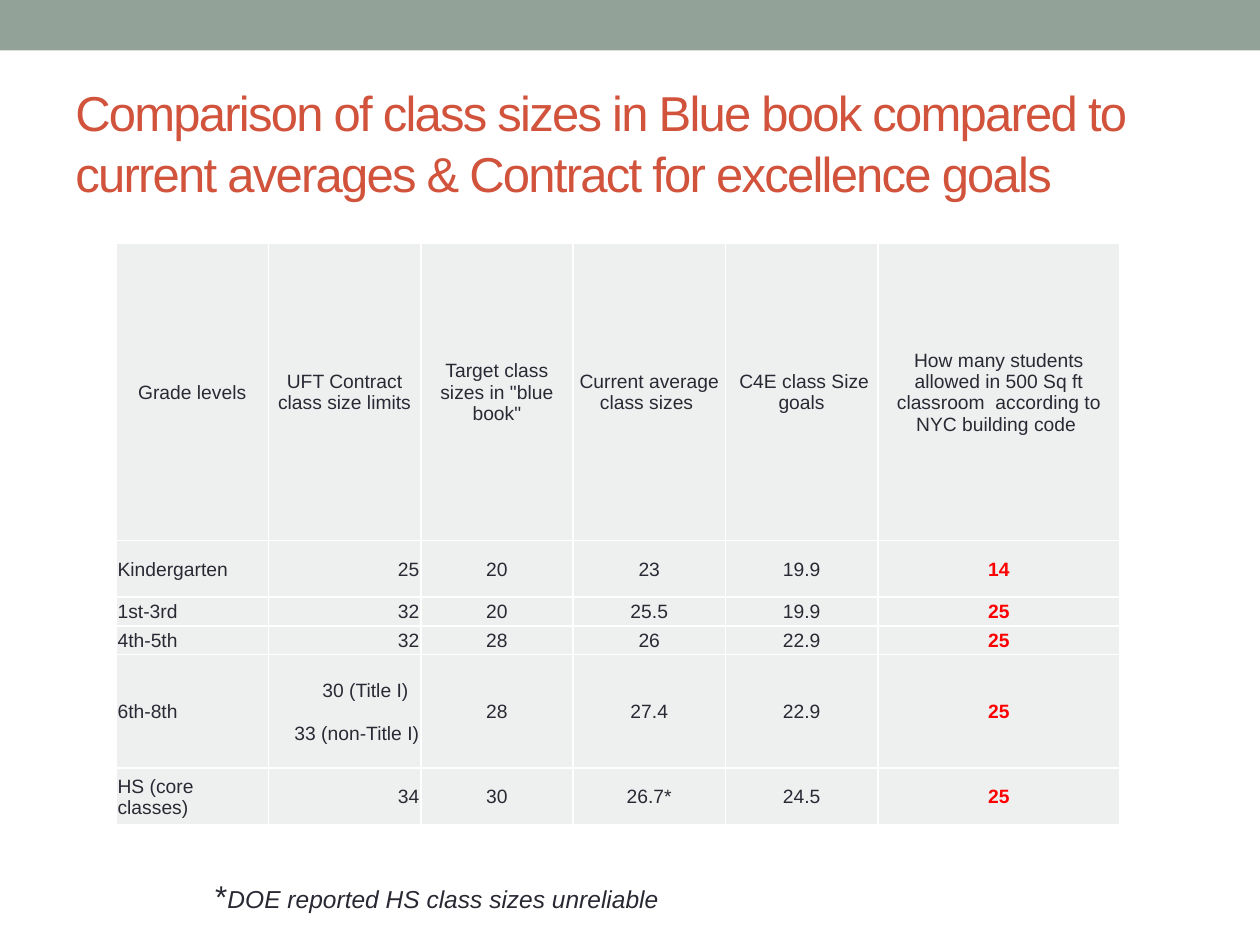
import pptx
import pptx.util
import pptx.dml.color
import pptx.enum.shapes
import pptx.enum.text
import pptx.oxml
import pptx.oxml.ns

Cm = pptx.util.Cm
Pt = pptx.util.Pt
ALIGN = pptx.enum.text.PP_ALIGN
ANCHOR = pptx.enum.text.MSO_ANCHOR

COLOURS = {
    "banner": "93A299",
    "title": "D2533C",
    "text": "292934",
    "cell": "EEF0EF",
    "border": "FFFFFF",
    "code_limit": "FF0000",
}
FONT = "Arial"
HEADINGS = [
    "Grade levels",
    "UFT Contract class size limits",
    'Target class sizes in "blue book"',
    "Current average class sizes ",
    " C4E class Size goals",
    "How many students allowed in 500 Sq ft classroom  according to NYC building code ",
]
GRADES = [
    ["Kindergarten", "25", "20", "23", "19.9", "14"],
    ["1st-3rd", "32", "20", "25.5", "19.9", "25"],
    ["4th-5th", "32", "28", "26", "22.9", "25"],
    ["6th-8th", "30 (Title I)  \n33 (non-Title I)", "28", "27.4", "22.9", "25"],
    ["HS (core classes)", "34", "30", "26.7*", "24.5", "25"],
]
COLUMN_WIDTHS = [3.07] * 5 + [4.88]
ROW_HEIGHTS = [5.99, 1.14, 0.58, 0.58, 2.29, 1.14]
GRADE_ALIGNS = [ALIGN.LEFT, ALIGN.RIGHT] + [ALIGN.CENTER] * 4


def colour(name):
    return pptx.dml.color.RGBColor.from_string(COLOURS[name])


def add_span(para, text, size, colour_name="text", bold=False, italic=False):
    span = para.add_run()
    span.text = text
    span.font.name = FONT
    span.font.size = Pt(size)
    span.font.bold = bold
    span.font.italic = italic
    span.font.color.rgb = colour(colour_name)
    return span


def add_banner(page, left, top, width, height):
    banner = page.shapes.add_shape(
        pptx.enum.shapes.MSO_SHAPE.RECTANGLE, Cm(left), Cm(top), Cm(width), Cm(height))
    banner.shadow.inherit = False
    banner.fill.solid()
    banner.fill.fore_color.rgb = colour("banner")
    banner.line.fill.background()


def add_title(page, left, top, width, height):
    box = page.shapes.add_textbox(Cm(left), Cm(top), Cm(width), Cm(height))
    frame = box.text_frame
    frame.word_wrap = True
    frame.vertical_anchor = ANCHOR.MIDDLE
    para = frame.paragraphs[0]
    para.line_spacing = 1.05
    span = add_span(
        para,
        "Comparison of class sizes in Blue book compared to "
        "current averages & Contract for excellence goals",
        28, "title")
    span.font._element.set("spc", "-100")


def add_borders(cell):
    properties = cell._tc.get_or_add_tcPr()
    for index, side in enumerate(["lnL", "lnR", "lnT", "lnB"]):
        properties.insert(index, pptx.oxml.parse_xml(
            f'<a:{side} {pptx.oxml.ns.nsdecls("a")} w="{Pt(1)}"><a:solidFill>'
            f'<a:srgbClr val="{COLOURS["border"]}"/></a:solidFill></a:{side}>'))


def fill_cell(cell, text, align, colour_name, bold):
    cell.fill.solid()
    cell.fill.fore_color.rgb = colour("cell")
    add_borders(cell)
    cell.vertical_anchor = ANCHOR.MIDDLE
    cell.margin_left = cell.margin_right = cell.margin_top = Cm(0.03)
    cell.margin_bottom = 0
    frame = cell.text_frame
    for index, line in enumerate(text.split("\n")):
        para = frame.add_paragraph() if index else frame.paragraphs[0]
        para.alignment = align
        if index:
            para.space_before = Pt(12.5)
        add_span(para, line, 11, colour_name, bold)


def add_class_sizes(page, left, top, width, height):
    rows = [HEADINGS] + GRADES
    table = page.shapes.add_table(
        len(rows), len(HEADINGS), Cm(left), Cm(top), Cm(width), Cm(height)).table
    table.first_row = False
    table.horz_banding = False
    for column, share in zip(table.columns, COLUMN_WIDTHS):
        column.width = Cm(width * share / sum(COLUMN_WIDTHS))
    for row, share in zip(table.rows, ROW_HEIGHTS):
        row.height = Cm(height * share / sum(ROW_HEIGHTS))
    for row_index, texts in enumerate(rows):
        for column_index, text in enumerate(texts):
            is_limit = row_index > 0 and column_index == len(HEADINGS) - 1
            fill_cell(
                table.cell(row_index, column_index),
                text,
                GRADE_ALIGNS[column_index] if row_index else ALIGN.CENTER,
                "code_limit" if is_limit else "text",
                is_limit)


def add_footnote(page, left, top, width, height):
    box = page.shapes.add_textbox(Cm(left), Cm(top), Cm(width), Cm(height))
    frame = box.text_frame
    frame.word_wrap = False
    frame.auto_size = pptx.enum.text.MSO_AUTO_SIZE.SHAPE_TO_FIT_TEXT
    para = frame.paragraphs[0]
    add_span(para, "*", 18)
    add_span(para, "DOE reported HS class sizes unreliable", 14, italic=True)


def main():
    deck = pptx.Presentation()
    deck.slide_width = Cm(25.4)
    deck.slide_height = Cm(19.05)
    page = deck.slides.add_slide(deck.slide_layouts[6])
    add_banner(page, 0, 0, 25.4, 1.02)
    add_title(page, 1.27, 1.47, 22.86, 2.74)
    add_class_sizes(page, 2.34, 4.9, 20.24, 11.73)
    add_footnote(page, 4.09, 17.55, 9.5, 1.02)
    deck.save("out.pptx")


if __name__ == "__main__":
    main()
